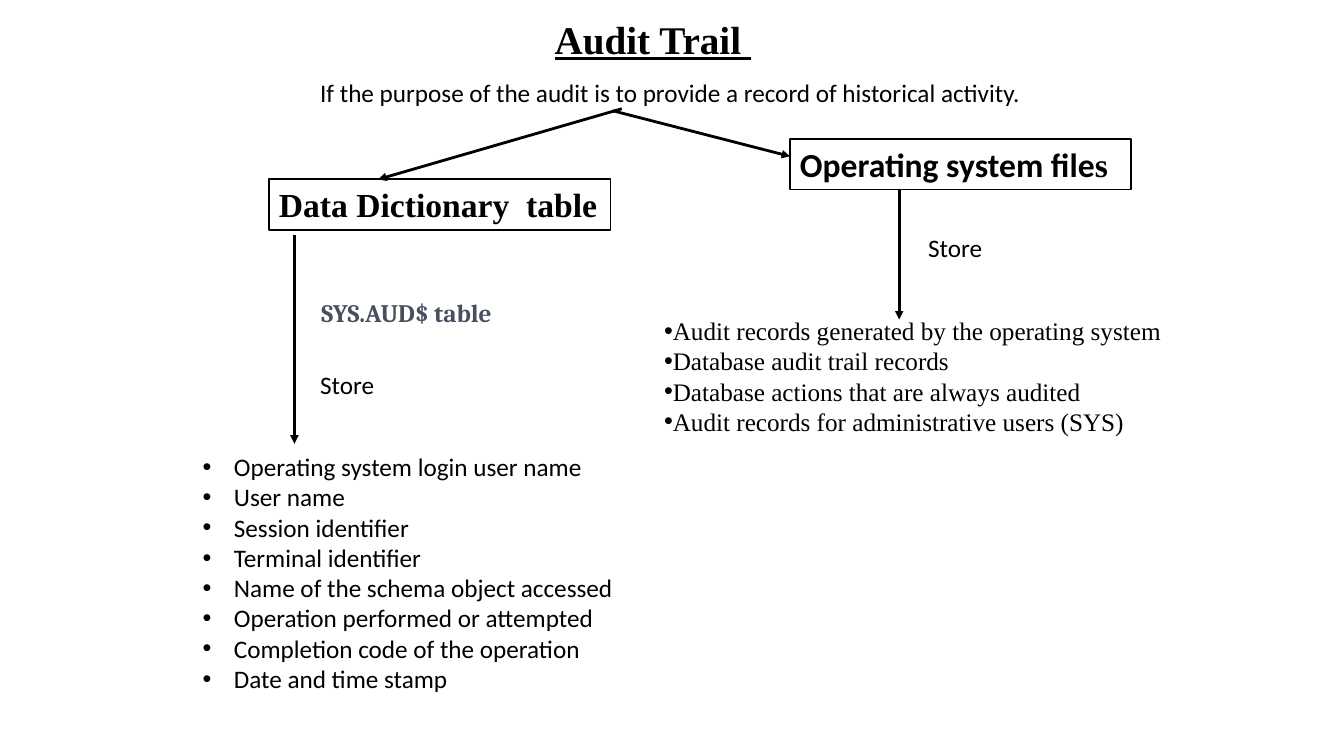
from lxml.etree import SubElement
from pptx import Presentation
from pptx.dml.color import RGBColor
from pptx.enum.shapes import MSO_CONNECTOR as Connector, MSO_SHAPE as Shape
from pptx.enum.text import MSO_ANCHOR as Anchor, MSO_AUTO_SIZE as AutoSize, PP_ALIGN as Align
from pptx.oxml.ns import qn
from pptx.util import Cm, Pt

BLACK = "000000"
SLATE = "474F60"
SANS = "Calibri"
SERIF = "Times New Roman"
TWO_CONTENT = 3

STORED_IN_TABLE = [
    "Operating system login user name",
    "User name",
    "Session identifier",
    "Terminal identifier",
    "Name of the schema object accessed",
    "Operation performed or attempted",
    "Completion code of the operation",
    "Date and time stamp",
]
STORED_IN_FILES = [
    "Audit records generated by the operating system",
    "Database audit trail records",
    "Database actions that are always audited",
    "Audit records for administrative users (SYS)",
]
# Start x, start y, end x, end y in centimetres
ARROWS = [
    (15.44, 2.79, 19.91, 3.94),
    (15.67, 2.74, 9.53, 4.52),
    (22.66, 4.78, 22.66, 8.05),
    (7.42, 5.92, 7.42, 11.18),
]


def color(hex_code):
    return RGBColor.from_string(hex_code)


def place(shape, left, top, width, height):
    shape.left, shape.top = Cm(left), Cm(top)
    shape.width, shape.height = Cm(width), Cm(height)


def style_span(span, font, size, bold=False, underline=False, hex_code=BLACK):
    span.font.name = font
    span.font.size = Pt(size)
    span.font.bold = bold
    span.font.underline = underline
    span.font.color.rgb = color(hex_code)


def write(shape, text, font, size, anchor=Anchor.TOP, **style):
    """Fill a shape with left-aligned text, one paragraph a line."""
    frame = shape.text_frame
    frame.text = text
    frame.word_wrap = True
    frame.auto_size = AutoSize.NONE
    frame.vertical_anchor = anchor
    for para in frame.paragraphs:
        para.alignment = Align.LEFT
        para.space_before = Pt(0)
        for span in para.runs:
            style_span(span, font, size, **style)


def add_label(page, area, text, font=SANS, **style):
    label = page.shapes.add_textbox(*map(Cm, area))
    write(label, text, font, 18, **style)


def add_box(page, area, text, font):
    box = page.shapes.add_shape(Shape.RECTANGLE, *map(Cm, area))
    box.shadow.inherit = False
    box.fill.background()
    box.line.color.rgb = color(BLACK)
    box.line.width = Pt(1.25)
    write(box, text, font, 24, anchor=Anchor.MIDDLE, bold=True)
    return box


def fill_list(body, area, items, font, indent):
    place(body, *area)
    write(body, "\n".join(items), font, 18)
    for para in body.text_frame.paragraphs:
        props = para._p.get_or_add_pPr()
        props.set("marL", str(Cm(indent)))
        props.set("indent", str(-Cm(indent)))
        SubElement(props, qn("a:buFont"), typeface="Arial")
        SubElement(props, qn("a:buChar"), char="•")


def add_arrow(page, ends):
    arrow = page.shapes.add_connector(Connector.STRAIGHT, *map(Cm, ends))
    arrow.line.color.rgb = color(BLACK)
    arrow.line.width = Pt(2)
    SubElement(arrow.line._get_or_add_ln(), qn("a:tailEnd"), type="triangle")
    SubElement(arrow._element.spPr, qn("a:effectLst"))


def main():
    deck = Presentation()
    deck.slide_width, deck.slide_height = Cm(33.87), Cm(19.05)
    page = deck.slides.add_slide(deck.slide_layouts[TWO_CONTENT])
    title, table_list, files_list = page.placeholders

    place(title, 13.72, 0.25, 5.51, 1.45)
    write(title, "Audit Trail ", SERIF, 28, bold=True, underline=True)
    add_label(page, (7.82, 1.83, 20.52, 1.02),
              "If the purpose of the audit is to provide a record of historical activity.")

    files_box = add_box(page, (19.91, 3.51, 8.59, 1.27), "Operating system file", SANS)
    plural = files_box.text_frame.paragraphs[0].add_run()
    plural.text = "s"
    style_span(plural, SERIF, 24, bold=True)
    add_box(page, (6.78, 4.52, 8.61, 1.27), "Data Dictionary  table", SERIF)

    add_label(page, (7.85, 7.37, 5.08, 1.02), "SYS.AUD$ table", "Cambria",
              bold=True, hex_code=SLATE)
    for left, top in [(7.82, 9.19), (23.14, 5.72)]:
        add_label(page, (left, top, 5.11, 1.02), "Store")

    fill_list(table_list, (4.85, 11.25, 12.7, 6.4), STORED_IN_TABLE, SANS, 0.79)
    fill_list(files_list, (16.48, 7.82, 14.17, 3.33), STORED_IN_FILES, SERIF, 0)

    for ends in ARROWS:
        add_arrow(page, ends)
    deck.save("out.pptx")


if __name__ == "__main__":
    main()
